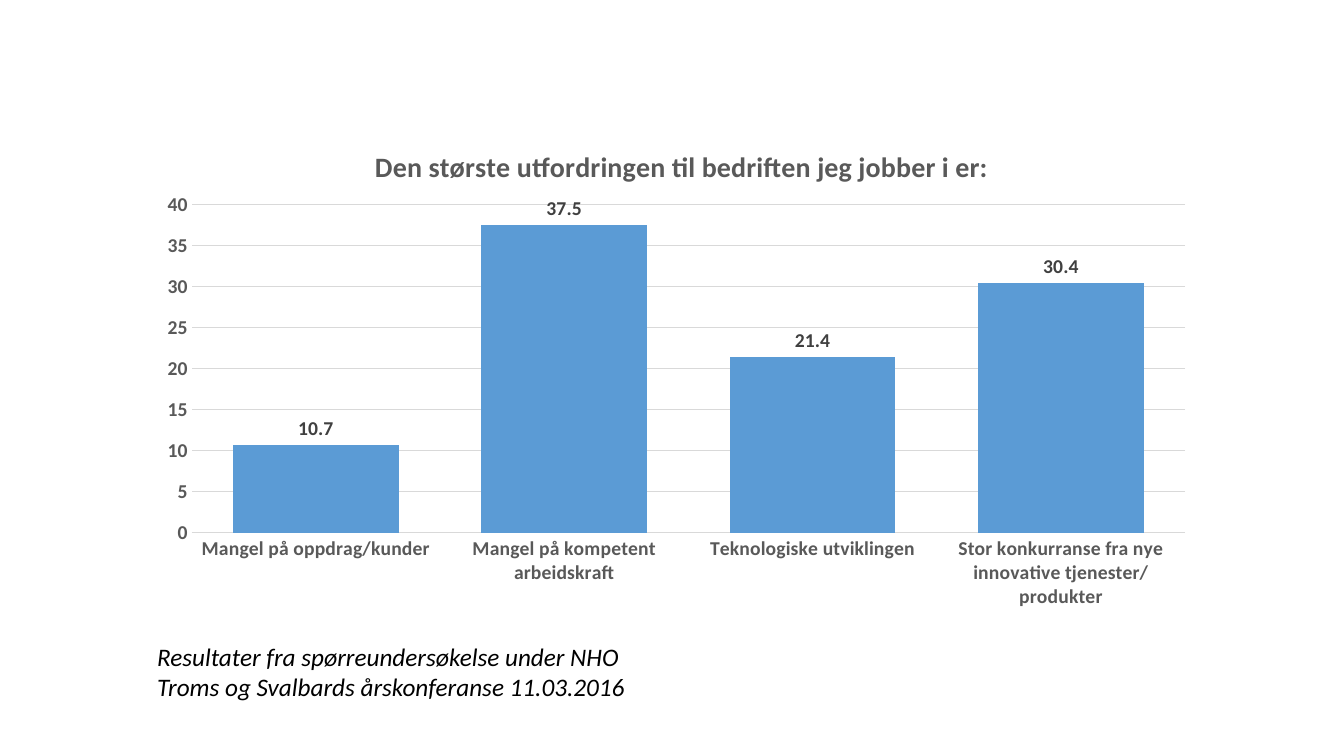
from lxml.etree import SubElement, fromstring
from pptx import Presentation
from pptx.chart.data import CategoryChartData
from pptx.dml.color import RGBColor
from pptx.enum.chart import XL_CHART_TYPE, XL_LABEL_POSITION, XL_TICK_MARK
from pptx.enum.text import MSO_AUTO_SIZE
from pptx.oxml.ns import qn
from pptx.util import Cm, Pt

# Content
TITLE = "Den største utfordringen til bedriften jeg jobber i er:"
BARS = {
    "Mangel på oppdrag/kunder": 10.7,
    "Mangel på kompetent arbeidskraft": 37.5,
    "Teknologiske utviklingen": 21.4,
    "Stor konkurranse fra nye innovative tjenester/produkter": 30.4,
}
NOTE = "Resultater fra spørreundersøkelse under NHO Troms og Svalbards årskonferanse 11.03.2016"
FONT = "Calibri"
GREY, RULE, BLUE, DARK, BLACK = "595959", "D9D9D9", "5B9BD5", "404040", "000000"

# Places in cm: left, top, width, height
CHART = (3.71, 3.07, 26.72, 12.52)
FOOT = (3.71, 16.03, 12.98, 1.8)
# Parts of the chart frame
HEAD = {"x": 0.21, "y": 0.04}
PLOT = {"x": 0.042, "y": 0.166, "w": 0.937, "h": 0.661}


def paint(target, tone):
    target.rgb = RGBColor.from_string(tone)


def style(font, size, tone, bold=False, italic=False):
    font.name, font.size = FONT, Pt(size)
    font.bold, font.italic = bold, italic
    paint(font.color, tone)


def rule(line):
    line.width = Pt(0.75)
    paint(line.color, RULE)


def place(part, index, spots, inner=False):
    for old in part.findall(qn("c:layout")):
        part.remove(old)
    space = part.nsmap["c"]
    frame = fromstring(f'<c:layout xmlns:c="{space}"><c:manualLayout/></c:layout>')
    part.insert(index, frame)
    if inner:
        SubElement(frame[0], qn("c:layoutTarget")).set("val", "inner")
    for key in spots:
        if key in "xy":
            SubElement(frame[0], qn(f"c:{key}Mode")).set("val", "edge")
    for key, share in spots.items():
        SubElement(frame[0], qn(f"c:{key}")).set("val", str(share))


# Slide
deck = Presentation()
deck.slide_width, deck.slide_height = Cm(33.87), Cm(19.05)
slide = deck.slides.add_slide(deck.slide_layouts[6])

# Chart
data = CategoryChartData()
data.categories = list(BARS)
data.add_series("Series 1", list(BARS.values()))
chart = slide.shapes.add_chart(
    XL_CHART_TYPE.COLUMN_CLUSTERED, *map(Cm, CHART), data).chart
style(chart.font, 14, BLACK, bold=True)
chart.has_legend = False

# Chart title
title = chart.chart_title
title.text_frame.text = TITLE
style(title.text_frame.paragraphs[0].runs[0].font, 20, GREY, bold=True)
place(title._element, 1, HEAD)
place(chart._chartSpace.chart.plotArea, 0, PLOT, inner=True)

# Axes
for axis in (chart.category_axis, chart.value_axis):
    axis.major_tick_mark = axis.minor_tick_mark = XL_TICK_MARK.NONE
    style(axis.tick_labels.font, 14, GREY, bold=True)
rule(chart.category_axis.format.line)
scale = chart.value_axis
scale.minimum_scale, scale.maximum_scale, scale.major_unit = 0, 40, 5
scale.format.line.fill.background()
rule(scale.major_gridlines.format.line)

# Bars and labels
plot = chart.plots[0]
plot.gap_width, plot.overlap, plot.vary_by_categories = 50, -27, False
bars = plot.series[0]
bars.format.fill.solid()
paint(bars.format.fill.fore_color, BLUE)
labels = bars.data_labels
labels.show_value = True
labels.position = XL_LABEL_POSITION.OUTSIDE_END
style(labels.font, 14, DARK, bold=True)

# Footnote
frame = slide.shapes.add_textbox(*map(Cm, FOOT)).text_frame
frame.word_wrap = True
frame.auto_size = MSO_AUTO_SIZE.SHAPE_TO_FIT_TEXT
frame.text = NOTE
style(frame.paragraphs[0].runs[0].font, 18, BLACK, italic=True)

deck.save("out.pptx")
